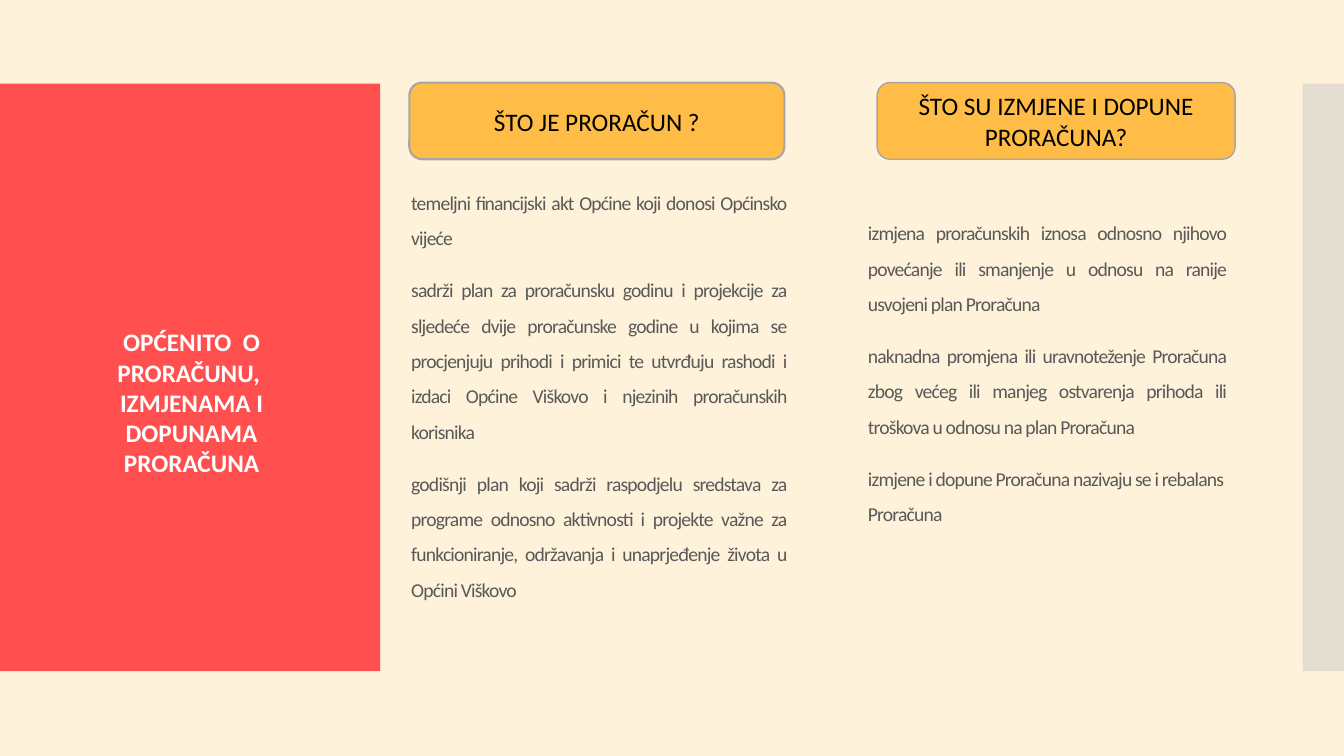
"""Build the slide explaining the budget and its amendments."""
from dataclasses import dataclass

import pptx
import pptx.dml.color
import pptx.enum.shapes
import pptx.enum.text
import pptx.oxml
import pptx.oxml.ns
import pptx.shapes.autoshape
import pptx.slide
import pptx.text.text
import pptx.util

Inches = pptx.util.Inches
Pt = pptx.util.Pt
RGBColor = pptx.dml.color.RGBColor
Align = pptx.enum.text.PP_ALIGN
Anchor = pptx.enum.text.MSO_ANCHOR
ShapeType = pptx.enum.shapes.MSO_SHAPE

CREAM = RGBColor(0xFF, 0xF2, 0xDA)
RED = RGBColor(0xFF, 0x4F, 0x4F)
SILVER = RGBColor(0xC8, 0xC8, 0xC8)
AMBER = RGBColor(0xFF, 0xBD, 0x47)
GREY = RGBColor(0xA6, 0xA6, 0xA6)
DARK_GREY = RGBColor(0x59, 0x59, 0x59)
BLACK = RGBColor(0x00, 0x00, 0x00)
WHITE = RGBColor(0xFF, 0xFF, 0xFF)

PANEL_TOP, PANEL_HEIGHT = 0.83, 5.83
BANNER_TOP, BANNER_HEIGHT = 0.82, 0.76
LETTER_SPACING = "-60"

HEADING_FONT = {"name": "Calibri", "size": Pt(18)}
BODY_FONT = {"name": "Calibri", "size": Pt(14)}
BODY_SPACING = {"line_spacing": 1.5, "space_before": Pt(12)}


@dataclass(frozen=True)
class Box:
    left: float
    top: float
    width: float
    height: float

    def lengths(self) -> tuple:
        return tuple(Inches(value) for value in (self.left, self.top, self.width, self.height))


@dataclass(frozen=True)
class Panel:
    left: float
    width: float
    color: RGBColor
    opacity: int = 100


@dataclass(frozen=True)
class Point:
    text: str
    alignment: Align = Align.JUSTIFY


@dataclass(frozen=True)
class Topic:
    heading: str
    banner: Box
    border: float
    body: Box
    points: tuple[Point, ...]


TITLE = "OPĆENITO  O PRORAČUNU,  IZMJENAMA I DOPUNAMA PRORAČUNA"
TITLE_BOX = Box(0.56, 3.18, 2.68, 1.62)

PANELS = (
    Panel(0, 3.77, RED),
    Panel(12.92, 0.41, SILVER, 50),
)

TOPICS = (
    Topic(
        "ŠTO JE PRORAČUN ?",
        Box(4.06, BANNER_TOP, 3.72, BANNER_HEIGHT),
        1.5,
        Box(3.98, 1.73, 3.92, 4.57),
        (
            Point("temeljni financijski akt Općine koji donosi Općinsko vijeće"),
            Point("sadrži plan za proračunsku godinu i projekcije za sljedeće dvije "
                  "proračunske godine u kojima se procjenjuju prihodi i primici te utvrđuju "
                  "rashodi i izdaci Općine Viškovo i njezinih proračunskih korisnika"),
            Point("godišnji plan koji sadrži raspodjelu sredstava za programe odnosno "
                  "aktivnosti i projekte važne za funkcioniranje, održavanja i "
                  "unaprjeđenje života u Općini Viškovo"),
        ),
    ),
    Topic(
        "ŠTO SU IZMJENE I DOPUNE PRORAČUNA?",
        Box(8.7, BANNER_TOP, 3.55, BANNER_HEIGHT),
        1,
        Box(8.51, 2.03, 3.75, 3.85),
        (
            Point("izmjena proračunskih iznosa odnosno njihovo povećanje ili smanjenje u "
                  "odnosu na ranije usvojeni plan Proračuna"),
            Point("naknadna promjena ili uravnoteženje Proračuna zbog većeg ili manjeg "
                  "ostvarenja prihoda ili troškova u odnosu na plan Proračuna"),
            Point("izmjene i dopune Proračuna nazivaju se i rebalans Proračuna", Align.LEFT),
        ),
    ),
)


def apply_format(target: object, values: dict) -> None:
    for name, value in values.items():
        setattr(target, name, value)


def write(paragraph: pptx.text.text._Paragraph, text: str, alignment: Align,
          font: dict, color: RGBColor) -> pptx.text.text._Run:
    paragraph.alignment = alignment
    run = paragraph.add_run()
    run.text = text
    apply_format(run.font, font)
    run.font.color.rgb = color
    return run


def add_filled_shape(slide: pptx.slide.Slide, kind: ShapeType, box: Box,
                     color: RGBColor) -> pptx.shapes.autoshape.Shape:
    shape = slide.shapes.add_shape(kind, *box.lengths())
    shape.shadow.inherit = False
    shape.fill.solid()
    shape.fill.fore_color.rgb = color
    return shape


def add_panel(slide: pptx.slide.Slide, panel: Panel) -> None:
    box = Box(panel.left, PANEL_TOP, panel.width, PANEL_HEIGHT)
    shape = add_filled_shape(slide, ShapeType.RECTANGLE, box, panel.color)
    shape.line.fill.background()
    if panel.opacity < 100:
        color = shape._element.spPr.find(".//" + pptx.oxml.ns.qn("a:srgbClr"))
        alpha = pptx.oxml.parse_xml(
            f'<a:alpha {pptx.oxml.ns.nsdecls("a")} val="{panel.opacity * 1000}"/>')
        color.append(alpha)
    slide.shapes._spTree.insert(2, shape._element)


def fill_title(slide: pptx.slide.Slide) -> None:
    title = slide.shapes.title
    positions = zip(("left", "top", "width", "height"), TITLE_BOX.lengths())
    apply_format(title, dict(positions))
    apply_format(title.text_frame, {
        "word_wrap": True,
        "auto_size": pptx.enum.text.MSO_AUTO_SIZE.NONE,
        "vertical_anchor": Anchor.MIDDLE,
    })
    write(title.text_frame.paragraphs[0], TITLE, Align.CENTER,
          HEADING_FONT | {"bold": True}, WHITE)


def add_banner(slide: pptx.slide.Slide, topic: Topic) -> None:
    banner = add_filled_shape(slide, ShapeType.ROUNDED_RECTANGLE, topic.banner, AMBER)
    banner.line.color.rgb = GREY
    banner.line.width = Pt(topic.border)
    apply_format(banner.text_frame, {"word_wrap": True, "vertical_anchor": Anchor.MIDDLE})
    write(banner.text_frame.paragraphs[0], topic.heading, Align.CENTER, HEADING_FONT, BLACK)


def add_body(slide: pptx.slide.Slide, topic: Topic) -> None:
    frame = slide.shapes.add_textbox(*topic.body.lengths()).text_frame
    frame.word_wrap = True
    for index, point in enumerate(topic.points):
        paragraph = frame.add_paragraph() if index else frame.paragraphs[0]
        apply_format(paragraph, BODY_SPACING)
        run = write(paragraph, point.text, point.alignment, BODY_FONT, DARK_GREY)
        run._r.get_or_add_rPr().set("spc", LETTER_SPACING)


def main() -> None:
    presentation = pptx.Presentation()
    presentation.slide_width = Inches(13.33)
    presentation.slide_height = Inches(7.5)
    slide = presentation.slides.add_slide(presentation.slide_layouts.get_by_name("Title Only"))
    slide.background.fill.solid()
    slide.background.fill.fore_color.rgb = CREAM
    for panel in PANELS:
        add_panel(slide, panel)
    fill_title(slide)
    for topic in TOPICS:
        add_banner(slide, topic)
        add_body(slide, topic)
    presentation.save("out.pptx")


if __name__ == "__main__":
    main()
